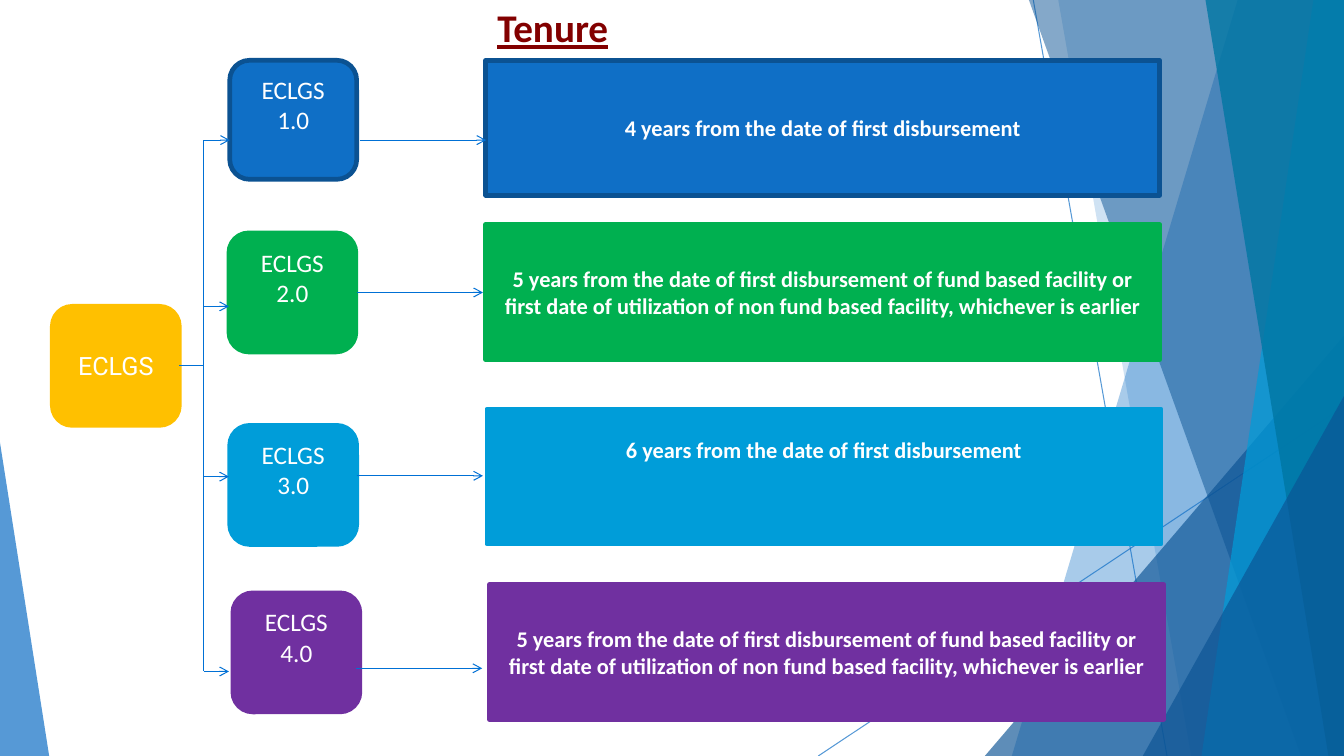
from lxml import etree
from pptx import Presentation
from pptx.dml.color import RGBColor
from pptx.enum import shapes, text
from pptx.oxml.ns import qn
from pptx.util import Cm, Pt

BLUE = RGBColor(0x0F, 0x6F, 0xC6)
BLUE_EDGE = RGBColor(0x0B, 0x52, 0x92)
NAVY = RGBColor(0x0B, 0x53, 0x94)
CYAN = RGBColor(0x00, 0x9D, 0xD9)
TEAL = RGBColor(0x00, 0x76, 0xA3)
GREEN = RGBColor(0x00, 0xB0, 0x50)
PURPLE = RGBColor(0x70, 0x30, 0xA0)
AMBER = RGBColor(0xFF, 0xC0, 0x00)
WIRE = RGBColor(0x00, 0x70, 0xD5)
MAROON = RGBColor(0x82, 0x00, 0x00)
WHITE = RGBColor(0xFF, 0xFF, 0xFF)

WIDTH, HEIGHT = 33.87, 19.05
NODE_W, NODE_H = 3.2, 3
TENURE_W, TENURE_H = 16.99, 3.4
TRUNK_X, ROOT_Y = 5.13, 9.22

FUND_TENURE = ("5 years from the date of first disbursement of fund based facility or "
               "first date of utilization of non fund based facility, whichever is earlier")

# name, text, fill, edge, node (x, y), tenure (x, y), extra bottom inset,
# branch (y, end x), arrow (start x, y)
SCHEMES = [
    ("1.0", "4 years from the date of first disbursement", BLUE, BLUE_EDGE,
     (5.79, 1.52), (12.24, 1.52), 0, (3.53, 5.79), (9.07, 3.53)),
    ("2.0", FUND_TENURE, GREEN, GREEN,
     (5.77, 5.87), (12.24, 5.66), 0, (7.72, 5.77), (8.99, 7.37)),
    ("3.0", "6 years from the date of first disbursement", CYAN, CYAN,
     (5.79, 10.72), (12.27, 10.31), 1.38, (12.01, 5.77), (8.99, 11.99)),
    ("4.0", FUND_TENURE, PURPLE, PURPLE,
     (5.87, 14.94), (12.34, 14.73), 0, (16.92, 5.77), (8.97, 16.84)),
]


def set_all(obj, values):
    for name, value in values.items():
        setattr(obj, name, value)


def set_alpha(fill_parent, percent):
    """Make the solid colour found under the given element translucent."""
    clr = fill_parent.find(".//" + qn("a:srgbClr"))
    etree.SubElement(clr, qn("a:alpha"), val=str(percent * 1000))


def paint(sp, fill, edge=None, alpha=None):
    sp.shadow.inherit = False
    sp.fill.solid()
    sp.fill.fore_color.rgb = fill
    if edge is None:
        sp.line.fill.background()
    else:
        sp.line.color.rgb = edge
        sp.line.width = Pt(3.35)
    if alpha:
        set_alpha(sp._element.spPr, alpha)


def add_line(s, start, end, color=WIRE, arrow=False, alpha=None):
    ln = s.shapes.add_connector(shapes.MSO_CONNECTOR.STRAIGHT,
                                *(Cm(v) for v in (*start, *end)))
    ln.line.color.rgb = color
    ln.line.width = Pt(0.75)
    if alpha:
        set_alpha(ln._element.spPr, alpha)
    if arrow:
        etree.SubElement(ln.line._get_or_add_ln(), qn("a:tailEnd"), type="arrow")
    etree.SubElement(ln._element.spPr, qn("a:effectLst"))


def add_band(s, top_x, bottom_x, color, alpha):
    """Full-height facet between a slanted edge and the right slide edge."""
    fb = s.shapes.build_freeform(Cm(top_x), Cm(0))
    fb.add_line_segments([(Cm(x), Cm(y)) for x, y in
                          ((WIDTH, 0), (WIDTH, HEIGHT), (bottom_x, HEIGHT))], close=True)
    paint(fb.convert_to_shape(), color, alpha=alpha)


def add_corner(s, left, top, width, apex, color, alpha):
    """Triangle standing on the bottom slide edge."""
    sp = s.shapes.add_shape(shapes.MSO_SHAPE.ISOSCELES_TRIANGLE, Cm(left), Cm(top),
                            Cm(width), Cm(HEIGHT - top))
    sp.adjustments[0] = apex
    paint(sp, color, alpha=alpha)


def add_backdrop(s):
    add_line(s, (26.04, 0), (29.41, HEIGHT), BLUE, alpha=70)
    add_line(s, (WIDTH, 10.24), (20.62, HEIGHT), BLUE, alpha=70)
    add_band(s, 31.19, 25.5, BLUE, 36)
    add_band(s, 26.67, 30.02, BLUE, 20)
    add_corner(s, 24.82, 8.46, WIDTH - 24.82, 1, NAVY, 66)
    add_band(s, 25.93, 32.79, NAVY, 50)
    add_band(s, 33.1, 30.28, CYAN, 70)
    add_band(s, 30.38, 33.48, TEAL, 80)
    add_corner(s, 28.8, 9.98, WIDTH - 28.8, 1, NAVY, 66)
    add_corner(s, 0, 11.15, 1.24, 0, BLUE, 70)


def add_box(s, kind, box, lines, fill, edge, font, inset=0):
    """Filled box with centred lines; inset lifts the text above the middle."""
    sp = s.shapes.add_shape(kind, *(Cm(v) for v in box))
    paint(sp, fill, edge)
    tf = sp.text_frame
    set_all(tf, {"word_wrap": True, "vertical_anchor": text.MSO_ANCHOR.MIDDLE,
                 "margin_bottom": Cm(0.13 + inset)})
    for i, line in enumerate(lines):
        p = tf.add_paragraph() if i else tf.paragraphs[0]
        p.alignment = text.PP_ALIGN.CENTER
        r = p.add_run()
        r.text = line
        set_all(r.font, font)
        r.font.color.rgb = WHITE


def add_node(s, at, lines, fill, edge, font_name="Calibri", inset=0):
    add_box(s, shapes.MSO_SHAPE.ROUNDED_RECTANGLE, (*at, NODE_W, NODE_H), lines, fill, edge,
            {"name": font_name, "size": Pt(18)}, inset)


def add_title(s, left, top, width, height):
    sp = s.shapes.title
    set_all(sp, {"left": Cm(left), "top": Cm(top), "width": Cm(width), "height": Cm(height)})
    tf = sp.text_frame
    set_all(tf, {"margin_left": 0, "margin_right": 0, "margin_top": Cm(0.03),
                 "margin_bottom": 0, "word_wrap": True,
                 "auto_size": text.MSO_AUTO_SIZE.NONE,
                 "vertical_anchor": text.MSO_ANCHOR.MIDDLE})
    p = tf.paragraphs[0]
    set_all(p, {"alignment": text.PP_ALIGN.CENTER, "space_before": Pt(1)})
    r = p.add_run()
    r.text = "Tenure"
    set_all(r.font, {"name": "Calibri", "size": Pt(28), "bold": True, "underline": True})
    r.font.color.rgb = MAROON


def add_scheme_tree(s):
    add_node(s, (1.32, 7.72), ["ECLGS"], AMBER, AMBER, "Roboto")
    add_line(s, (1.32 + NODE_W, ROOT_Y), (TRUNK_X, ROOT_Y))
    branch_ys = [scheme[7][0] for scheme in SCHEMES]
    add_line(s, (TRUNK_X, branch_ys[0]), (TRUNK_X, branch_ys[-1]))
    for name, tenure, fill, edge, node, box, inset, branch, arrow in SCHEMES:
        add_node(s, node, ["ECLGS", name], fill, edge, inset=0.77)
        add_box(s, shapes.MSO_SHAPE.RECTANGLE, (*box, TENURE_W, TENURE_H), [tenure],
                fill, edge, {"name": "Calibri", "size": Pt(16), "bold": True}, inset)
        branch_y, branch_end = branch
        add_line(s, (TRUNK_X, branch_y), (branch_end, branch_y), arrow=True)
        x, y = arrow
        add_line(s, arrow, (x + 3.18, y), arrow=True)


def main():
    prs = Presentation()
    prs.slide_width, prs.slide_height = Cm(WIDTH), Cm(HEIGHT)
    s = prs.slides.add_slide(prs.slide_layouts[5])
    add_backdrop(s)
    add_title(s, 2.13, 0.05, 23.6, 1.24)
    add_scheme_tree(s)
    prs.save("out.pptx")


if __name__ == "__main__":
    main()
